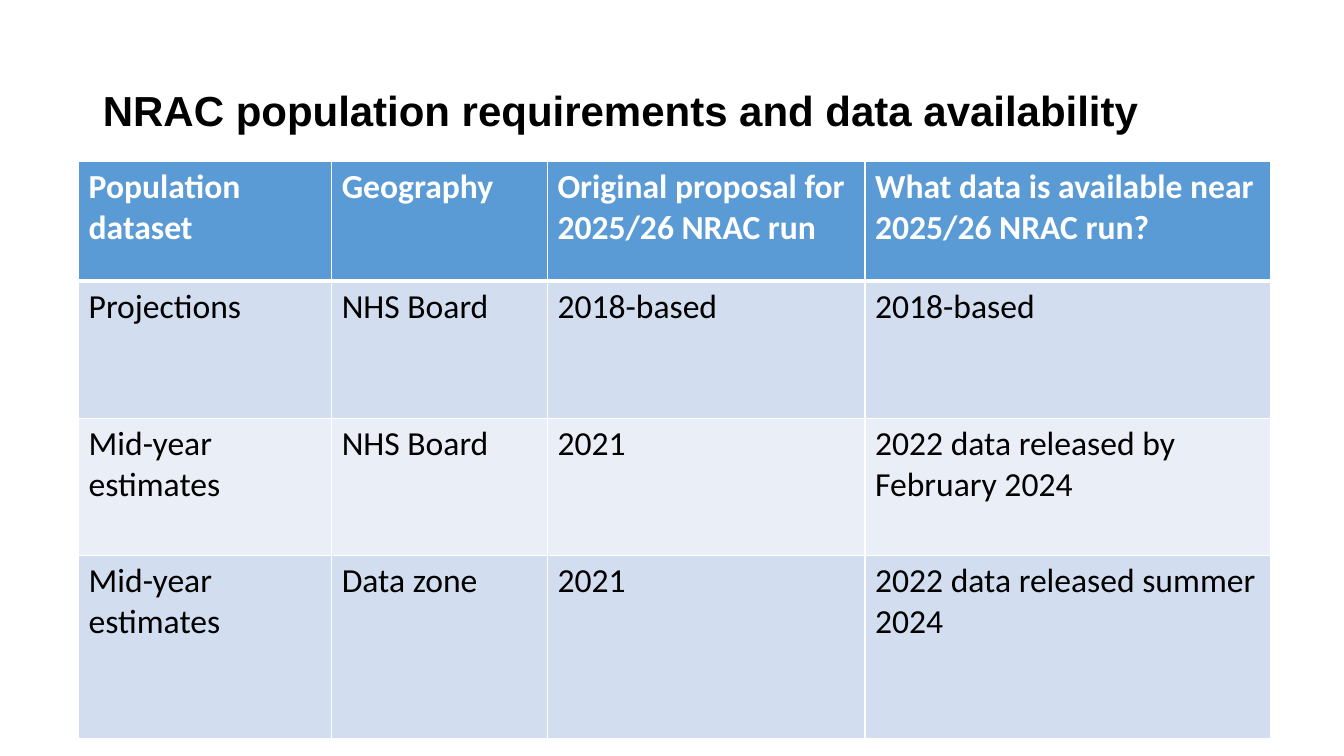
from dataclasses import dataclass

from lxml.etree import SubElement
from pptx import Presentation
from pptx.dml.color import RGBColor
from pptx.enum.text import MSO_ANCHOR, PP_ALIGN
from pptx.oxml.ns import qn
from pptx.util import Inches, Pt

# Content
TITLE = "NRAC population requirements and data availability"
ROWS = [
    ("Population dataset", "Geography", "Original proposal for 2025/26 NRAC run",
     "What data is available near 2025/26 NRAC run?"),
    ("Projections", "NHS Board", "2018-based", "2018-based"),
    ("Mid-year estimates", "NHS Board", "2021", "2022 data released by February 2024"),
    ("Mid-year estimates", "Data zone", "2021", "2022 data released summer 2024"),
]

# Layout grid, in inches
SLIDE_SIZE = (13.33, 7.5)
TITLE_BOX = (0.92, 0.4, 11.5, 1.45)
TABLE_ORIGIN = (0.78, 1.6)
COLUMNS = (2.51, 2.14, 3.15, 4.02)
HEIGHTS = (1.19, 1.36, 1.36, 1.82)


@dataclass(frozen=True)
class Theme:
    white: str = "FFFFFF"
    black: str = "000000"
    header: str = "5B9BD5"
    bands: tuple = ("D2DEEF", "EAEFF7")
    title_font: str = "Arial"
    table_font: str = "Calibri"
    title_size: int = 30
    table_size: int = 24
    rule: int = 1
    header_rule: int = 3


THEME = Theme()


def write(tf, text, color, **font):
    p = tf.paragraphs[0]
    p.alignment = PP_ALIGN.LEFT
    r = p.add_run()
    r.text = text
    for name, value in font.items():
        setattr(r.font, name, value)
    r.font.color.rgb = RGBColor.from_string(color)
    return p


def set_borders(cell, **widths):
    tc_pr = cell._tc.get_or_add_tcPr()
    for side in ("L", "R", "T", "B"):
        width = Pt(widths.get(side, THEME.rule))
        line = SubElement(tc_pr, qn(f"a:ln{side}"), w=str(width))
        fill = SubElement(line, qn("a:solidFill"))
        SubElement(fill, qn("a:srgbClr"), val=THEME.white)


def add_title(s):
    sp = s.shapes.title
    sp.left, sp.top, sp.width, sp.height = map(Inches, TITLE_BOX)
    tf = sp.text_frame
    tf.word_wrap = True
    tf.vertical_anchor = MSO_ANCHOR.MIDDLE
    p = write(tf, TITLE, THEME.black, name=THEME.title_font,
              size=Pt(THEME.title_size), bold=True)
    p.line_spacing = 0.9


def add_population_table(s):
    box = map(Inches, (*TABLE_ORIGIN, sum(COLUMNS), sum(HEIGHTS)))
    table = s.shapes.add_table(len(ROWS), len(COLUMNS), *box).table
    for column, width in zip(table.columns, COLUMNS):
        column.width = Inches(width)
    for row, height in zip(table.rows, HEIGHTS):
        row.height = Inches(height)

    for i, row in enumerate(ROWS):
        is_header = i == 0
        fill = THEME.header if is_header else THEME.bands[(i - 1) % 2]
        # The heavy rule lies between the header and the first body row
        heavy = {0: {"B": THEME.header_rule}, 1: {"T": THEME.header_rule}}.get(i, {})
        for j, text in enumerate(row):
            cell = table.cell(i, j)
            set_borders(cell, **heavy)
            cell.fill.solid()
            cell.fill.fore_color.rgb = RGBColor.from_string(fill)
            write(cell.text_frame, text, THEME.white if is_header else THEME.black,
                  name=THEME.table_font, size=Pt(THEME.table_size), bold=is_header)


def main():
    prs = Presentation()
    prs.slide_width, prs.slide_height = map(Inches, SLIDE_SIZE)
    s = prs.slides.add_slide(prs.slide_layouts[5])
    add_title(s)
    add_population_table(s)
    prs.save("out.pptx")


if __name__ == "__main__":
    main()
